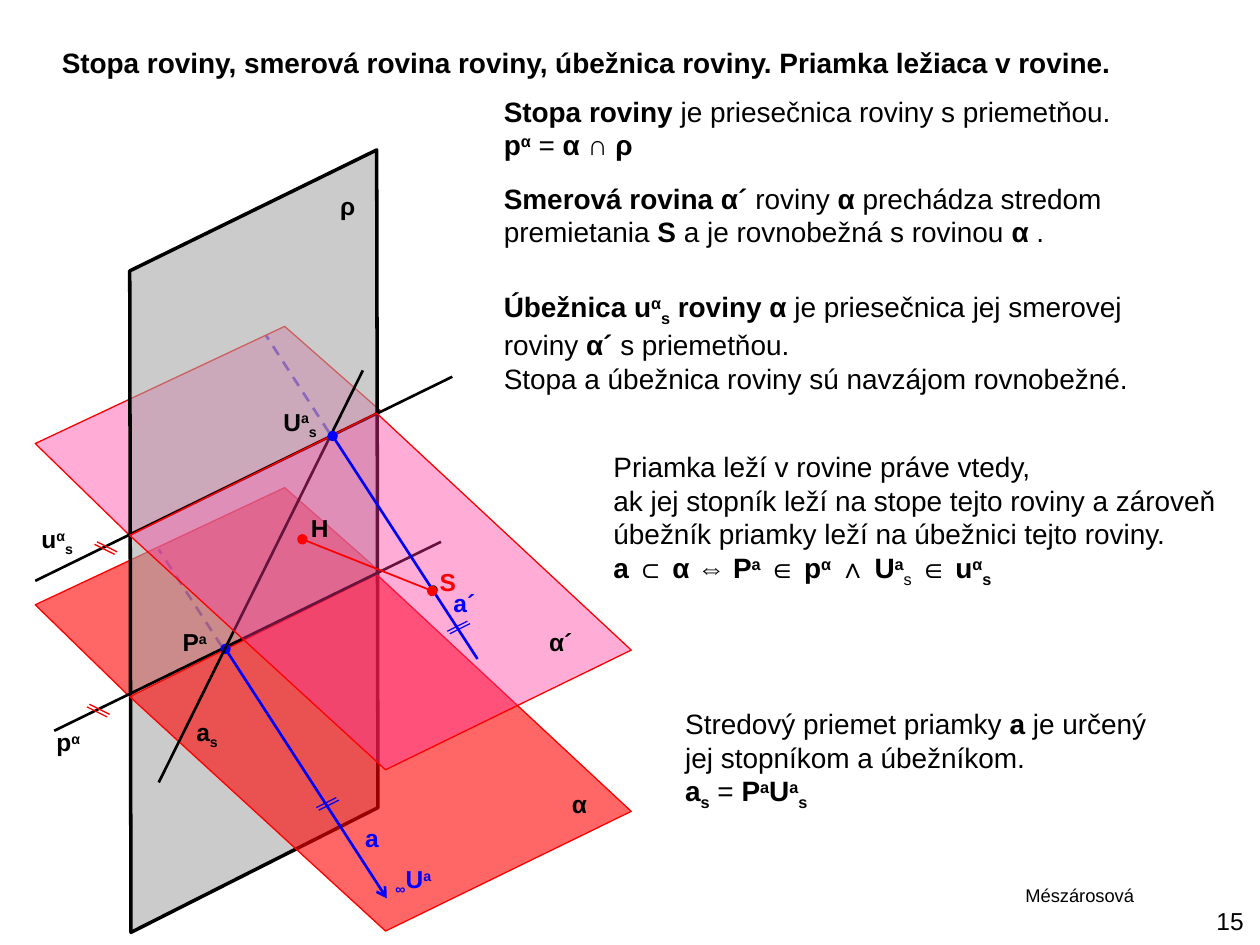
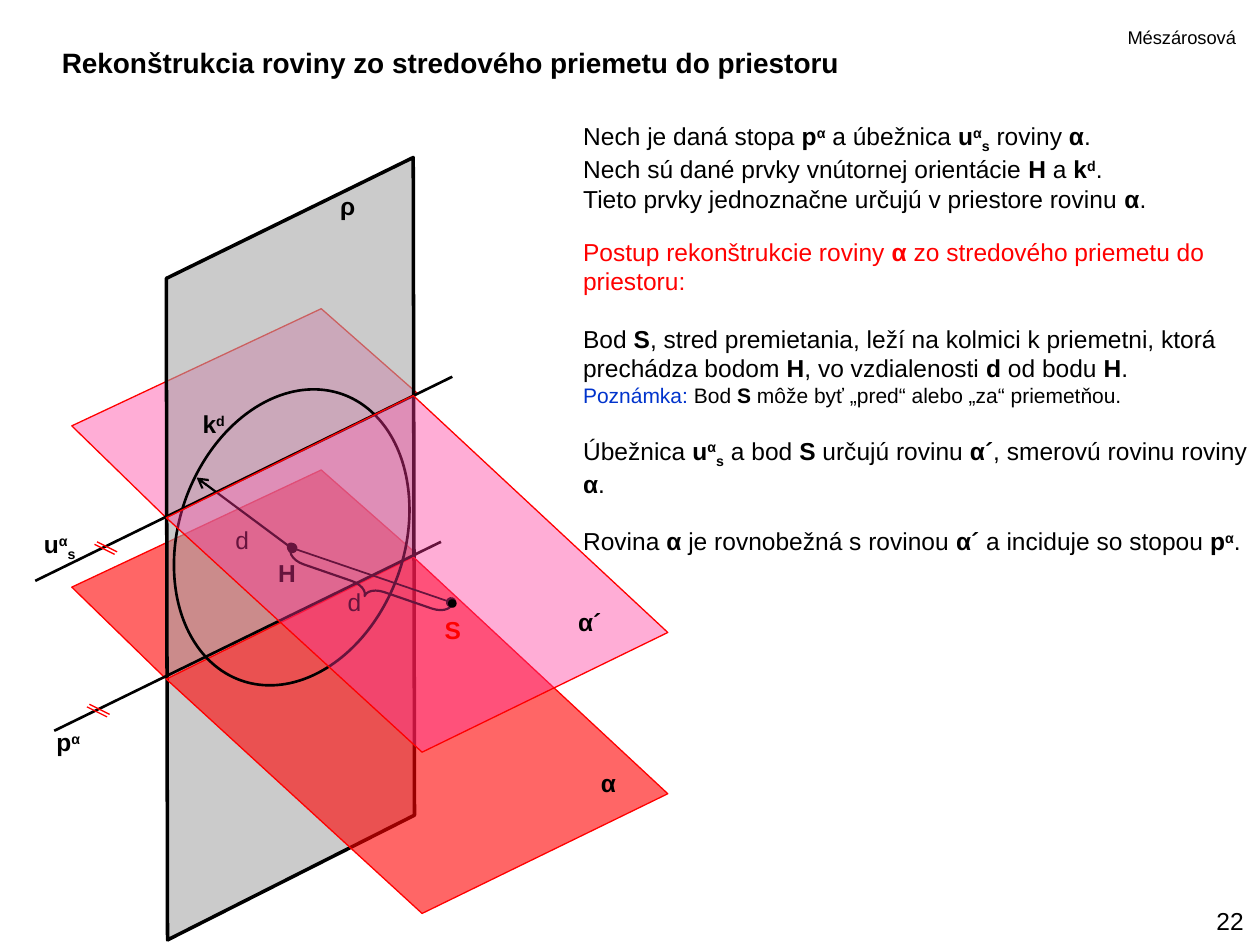
from dataclasses import dataclass
from typing import Iterator, Optional, Sequence

from lxml.etree import SubElement
from pptx import Presentation
from pptx.dml.color import RGBColor
from pptx.enum.dml import MSO_LINE_DASH_STYLE as Dash
from pptx.enum.shapes import MSO_CONNECTOR as Connector, MSO_SHAPE as Preset
from pptx.enum.text import MSO_ANCHOR as Anchor, MSO_AUTO_SIZE as AutoSize, PP_ALIGN as Align
from pptx.oxml.ns import qn
from pptx.util import Inches, Pt

BLACK = RGBColor(0x00, 0x00, 0x00)
RED = RGBColor(0xFF, 0x00, 0x00)
PINK = RGBColor(0xFF, 0x33, 0x99)
GREY = RGBColor(0xA6, 0xA6, 0xA6)
BLUE = RGBColor(0x00, 0x00, 0xFF)
NOTE_BLUE = RGBColor(0x00, 0x33, 0xCC)
FONT = "Arial"
BASELINES = {"^": "30000", "_": "-25000"}
BLANK_LINE = 16

Point = tuple[float, float]

RHO = [(1.03, 2.15), (1.04, 7.4), (3, 6.41), (2.99, 1.19)]
ALPHA_BACK = [(1.02, 5.52), (3.02, 4.54), (2.26, 3.87), (0.28, 4.8)]
ALPHA_FRONT = [(1.03, 5.53), (2.99, 4.56), (5.01, 6.44), (3.06, 7.39)]
ALPHA_LIFT = (0, -1.28)


@dataclass
class Line:
    text: str
    size: float = 14
    color: RGBColor = BLACK
    before: float = 0


@dataclass
class Label:
    left: float
    top: float
    width: float
    text: str
    color: RGBColor = BLACK


@dataclass
class Segment:
    start: Point
    end: Point
    color: RGBColor = BLACK
    width: float = 1.5
    head: str = ""
    tail: str = ""
    dashed: bool = False


@dataclass
class Plane:
    corners: Sequence[Point]
    fill: RGBColor
    opacity: int
    edge: RGBColor = RED
    edge_width: float = 0.75


def shift(points: Sequence[Point], offset: Point) -> list[Point]:
    return [(x + offset[0], y + offset[1]) for x, y in points]


def apply(target, values: dict) -> None:
    for name, value in values.items():
        setattr(target, name, value)


def split_markup(text: str) -> Iterator[tuple[str, frozenset]]:
    active, piece = set(), ""
    for letter in text:
        if letter in "*^_~":
            if piece:
                yield piece, frozenset(active)
            active ^= {letter}
            piece = ""
        else:
            piece += letter
    if piece:
        yield piece, frozenset(active)


def write_line(para, line: Line) -> None:
    apply(para, {"space_before": Pt(line.before), "space_after": Pt(0)})
    for text, marks in split_markup(line.text):
        span = para.add_run()
        span.text = text
        apply(span.font, {"name": FONT, "size": Pt(line.size), "bold": "*" in marks})
        span.font.color.rgb = NOTE_BLUE if "~" in marks else line.color
        for mark, baseline in BASELINES.items():
            if mark in marks:
                span._r.get_or_add_rPr().set("baseline", baseline)


def write_lines(frame, lines: Sequence[Line], wrap: bool = False,
                align: Align = Align.LEFT, anchor: Anchor = Anchor.TOP) -> None:
    apply(frame, {"word_wrap": wrap, "auto_size": AutoSize.SHAPE_TO_FIT_TEXT,
                  "vertical_anchor": anchor})
    for index, line in enumerate(lines):
        para = frame.add_paragraph() if index else frame.paragraphs[0]
        para.alignment = align
        write_line(para, line)


def add_text(page, left: float, top: float, width: float, height: float,
             lines: Sequence[Line], **layout) -> None:
    box = page.shapes.add_textbox(Inches(left), Inches(top), Inches(width), Inches(height))
    write_lines(box.text_frame, lines, **layout)


def add_labels(page, labels: Sequence[Label]) -> None:
    for label in labels:
        add_text(page, label.left, label.top, label.width, 0.34,
                 [Line(label.text, color=label.color)])


def add_plane(page, plane: Plane) -> None:
    corners = [(Inches(x), Inches(y)) for x, y in plane.corners]
    builder = page.shapes.build_freeform(*corners[0])
    builder.add_line_segments(corners[1:], close=True)
    shape = builder.convert_to_shape()
    shape.shadow.inherit = False
    shape.fill.solid()
    shape.fill.fore_color.rgb = plane.fill
    color = shape.element.spPr.find(qn("a:solidFill"))[0]
    SubElement(color, qn("a:alpha")).set("val", str(plane.opacity * 1000))
    shape.line.color.rgb = plane.edge
    shape.line.width = Pt(plane.edge_width)


def add_segment(page, segment: Segment) -> None:
    ends = [Inches(value) for value in (*segment.start, *segment.end)]
    connector = page.shapes.add_connector(Connector.STRAIGHT, *ends)
    connector.line.color.rgb = segment.color
    connector.line.width = Pt(segment.width)
    if segment.dashed:
        connector.line.dash_style = Dash.DASH
    properties = connector.element.spPr
    outline = properties.find(qn("a:ln"))
    for tag, kind in (("a:headEnd", segment.head), ("a:tailEnd", segment.tail)):
        if kind:
            SubElement(outline, qn(tag)).set("type", kind)
    SubElement(properties, qn("a:effectLst"))


def add_ticks(page, start: Point, color: RGBColor) -> None:
    slope = -1 if color == RED else 1
    for step in (0, 0.02):
        x, y = start[0] + step, start[1] + slope * step
        add_segment(page, Segment((x, y), (x - 0.16, y + slope * 0.08), color, 0.75))


def add_preset(page, preset: Preset, left: float, top: float, width: float, height: float,
               line_width: float, rotation: float = 0, fill: Optional[RGBColor] = None):
    shape = page.shapes.add_shape(preset, Inches(left), Inches(top), Inches(width), Inches(height))
    shape.shadow.inherit = False
    shape.rotation = rotation
    if fill is None:
        shape.fill.background()
    else:
        shape.fill.solid()
        shape.fill.fore_color.rgb = fill
    shape.line.color.rgb = BLACK
    shape.line.width = Pt(line_width)
    return shape


def add_dot(page, left: float, top: float) -> None:
    add_preset(page, Preset.OVAL, left, top, 0.04, 0.04, 2, fill=BLACK)


def add_page(deck, title: str, title_width: float, number: int, author_at: Point):
    page = deck.slides.add_slide(deck.slide_layouts[5])
    heading = page.shapes.title
    apply(heading, {"left": Inches(0.39), "top": Inches(0.31),
                    "width": Inches(title_width), "height": Inches(0.37)})
    write_lines(heading.text_frame, [Line(f"*{title}*", 16)])
    add_text(page, 9.53, 7.13, 0.44, 0.34, [Line(str(number))],
             align=Align.RIGHT, anchor=Anchor.BOTTOM)
    add_text(page, *author_at, 1.08, 0.28, [Line("Mészárosová", 10.5)])
    return page


def add_lower_planes(page, plane_offset: Point, rho_offset: Point) -> None:
    back = shift(ALPHA_BACK, plane_offset)
    add_plane(page, Plane(back, RED, 60))
    add_plane(page, Plane(shift(back, ALPHA_LIFT), PINK, 40))
    add_plane(page, Plane(shift(RHO, rho_offset), GREY, 58, BLACK, 2))
    add_plane(page, Plane(shift(ALPHA_FRONT, plane_offset), RED, 60))
    add_segment(page, Segment((0.43, 5.8), (3.5, 4.3)))
    add_segment(page, Segment((0.28, 4.61), (3.59, 2.99)))
    add_ticks(page, (0.85, 5.69), RED)
    add_ticks(page, (0.91, 4.4), RED)
    add_labels(page, [Label(0.35, 5.72, 0.44, "*p^α^*"), Label(2.6, 1.47, 0.31, "*ρ*")])


def add_upper_plane(page, plane_offset: Point) -> None:
    front = shift(shift(ALPHA_FRONT, plane_offset), ALPHA_LIFT)
    add_plane(page, Plane(front, PINK, 40))


def build_trace_page(deck) -> None:
    page = add_page(deck, "Stopa roviny, smerová rovina roviny, úbežnica roviny. "
                    "Priamka ležiaca v rovine.", 8.64, 15, (8.04, 6.97))
    for start, end in (((2.61, 3.43), (2.11, 2.66)), ((1.76, 5.13), (1.26, 4.36))):
        add_segment(page, Segment(start, end, BLUE, dashed=True))
    add_lower_planes(page, (0, 0), (0, 0))
    add_segment(page, Segment((1.79, 5.15), (3.07, 7.13), BLUE, head="oval", tail="arrow"))
    add_ticks(page, (2.67, 6.33), BLUE)
    add_segment(page, Segment((2.88, 2.94), (1.26, 6.21)))
    add_upper_plane(page, (0, 0))
    add_dot(page, 3.42, 4.66)
    add_ticks(page, (3.71, 4.93), BLUE)
    add_segment(page, Segment((2.64, 3.46), (3.79, 5.23), BLUE, head="oval"))
    add_segment(page, Segment((2.4, 4.28), (3.43, 4.69), RED, 1, "oval", "oval"))
    add_labels(page, [
        Label(4.44, 6.21, 0.33, "*α*"),
        Label(0.23, 4.11, 0.48, "*u^α^_s_*"),
        Label(3.04, 6.81, 0.51, "*_∞_U^a^*", BLUE),
        Label(2.8, 6.48, 0.31, "*a*", BLUE),
        Label(1.35, 4.93, 0.41, "*P^a^*"),
        Label(1.46, 5.64, 0.38, "*a_s_*"),
        Label(4.26, 4.93, 0.5, "*α´*"),
        Label(3.39, 4.45, 0.33, "*S*", RED),
        Label(3.5, 4.62, 0.38, "*a´*", BLUE),
        Label(2.37, 4.02, 0.34, "*H*"),
        Label(2.15, 3.18, 0.49, "*U^a^_s_*"),
    ])
    definitions = [
        (3.9, 0.7, 5.08, 0.64, [
            "*Stopa roviny* je priesečnica roviny s priemetňou.",
            "*p^α^* = *α ∩ ρ*"]),
        (3.9, 1.39, 5.08, 0.64, [
            "*Smerová rovina α´* roviny *α* prechádza stredom",
            "premietania *S* a je rovnobežná s rovinou *α* ."]),
        (3.9, 2.25, 5.38, 0.91, [
            "*Úbežnica u^α^_s_ roviny α* je priesečnica jej smerovej",
            "roviny *α´* s priemetňou.",
            "Stopa a úbežnica roviny sú navzájom rovnobežné."]),
        (4.77, 3.52, 5.11, 1.18, [
            "Priamka leží v rovine práve vtedy,",
            "ak jej stopník leží na stope tejto roviny a zároveň",
            "úbežník priamky leží na úbežnici tejto roviny.",
            "*a* ⊂ *α* ⇔ *P^a^* ∈ *p^α^* ∧ *U^a^*_s_ ∈ *u^α^_s_*"]),
        (5.34, 5.56, 3.97, 0.91, [
            "Stredový priemet priamky *a* je určený",
            "jej stopníkom a úbežníkom.",
            "*a_s_* = *P^a^U^a^_s_*"]),
    ]
    for *frame, texts in definitions:
        add_text(page, *frame, [Line(text, 16) for text in texts])


def build_reconstruction_page(deck) -> None:
    page = add_page(deck, "Rekonštrukcia roviny zo stredového priemetu do priestoru",
                    6.58, 22, (8.85, 0.16))
    plane_offset = (0.29, -0.14)
    add_lower_planes(page, plane_offset, (0.29, 0.06))
    add_segment(page, Segment((2.32, 4.35), (3.58, 4.78), BLACK, 1, "oval", "oval"))
    add_preset(page, Preset.OVAL, 1.42, 3.06, 1.79, 2.41, 1.5, 19.5)
    add_segment(page, Segment((1.56, 3.79), (2.3, 4.34), BLACK, 1.25, "arrow"))
    brace = add_preset(page, Preset.RIGHT_BRACE, 2.84, 3.98, 0.16, 1.35, 1.25, 289)
    brace.adjustments[0] = 0.85
    brace.element.spPr.get_or_add_xfrm().set("flipH", "1")
    add_dot(page, 2.29, 4.32)
    add_labels(page, [
        Label(4.67, 6.05, 0.33, "*α*"),
        Label(0.25, 4.15, 0.51, "*u^α^_s_*"),
        Label(2.11, 4.38, 0.34, "*H*"),
        Label(1.77, 4.12, 0.31, "d"),
        Label(2.66, 4.61, 0.31, "d"),
        Label(1.51, 3.2, 0.4, "*k^d^*"),
    ])
    add_text(page, 4.53, 0.91, 4.88, 0.81, [
        Line("Nech je daná stopa *p^α^* a úbežnica *u^α^_s_* roviny *α*."),
        Line("Nech sú dané prvky vnútornej orientácie *H* a *k^d^*."),
        Line("Tieto prvky jednoznačne určujú v priestore rovinu *α*."),
    ], wrap=True)
    add_upper_plane(page, plane_offset)
    add_dot(page, 3.57, 4.77)
    add_labels(page, [Label(4.49, 4.77, 0.5, "*α´*"), Label(3.43, 4.83, 0.33, "*S*", RED)])
    add_text(page, 4.53, 1.83, 5.47, 2.66, [
        Line("Postup rekonštrukcie roviny *α* zo stredového priemetu do priestoru:", color=RED),
        Line("Bod *S*, stred premietania, leží na kolmici k priemetni, ktorá prechádza "
             "bodom *H*, vo vzdialenosti *d* od bodu *H*.", before=BLANK_LINE),
        Line("~Poznámka: ~Bod *S* môže byť „pred“ alebo „za“ priemetňou.", 12),
        Line("Úbežnica *u^α^_s_* a bod *S* určujú rovinu *α´*, smerovú rovinu roviny *α*.",
             before=BLANK_LINE),
        Line("Rovina *α* je rovnobežná s rovinou *α´* a inciduje so stopou *p^α^*.",
             before=BLANK_LINE),
    ], wrap=True)


def main() -> None:
    deck = Presentation()
    apply(deck, {"slide_width": Inches(10), "slide_height": Inches(7.5)})
    build_trace_page(deck)
    build_reconstruction_page(deck)
    deck.save("out.pptx")


if __name__ == "__main__":
    main()
